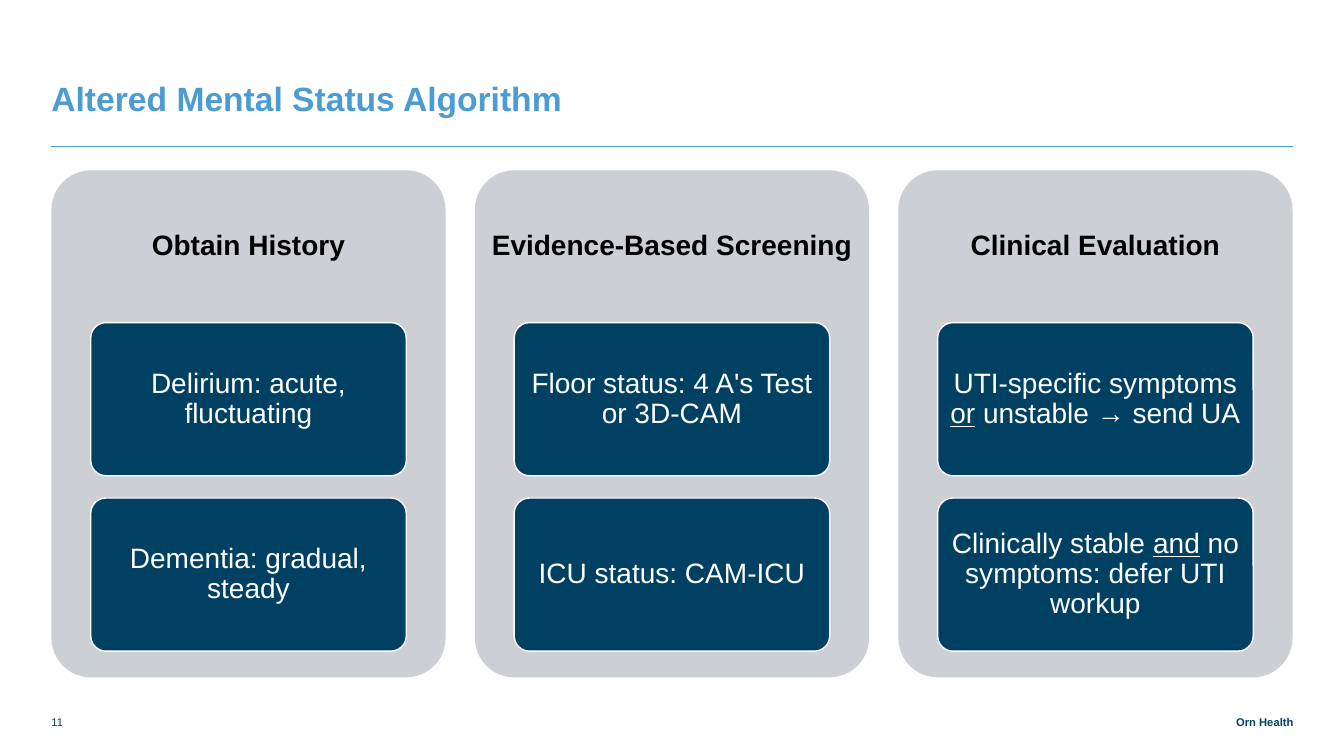
"""Build the Altered Mental Status Algorithm slide: three panels of two cards each."""
from lxml import etree
from pptx import Presentation
from pptx.dml.color import RGBColor
from pptx.enum.shapes import MSO_CONNECTOR, MSO_SHAPE
from pptx.enum.text import MSO_ANCHOR, PP_ALIGN
from pptx.oxml.ns import qn
from pptx.util import Inches, Pt

ROUNDED = MSO_SHAPE.ROUNDED_RECTANGLE
STRAIGHT = MSO_CONNECTOR.STRAIGHT
MIDDLE, BOTTOM = MSO_ANCHOR.MIDDLE, MSO_ANCHOR.BOTTOM
LEFT, CENTER, RIGHT = PP_ALIGN.LEFT, PP_ALIGN.CENTER, PP_ALIGN.RIGHT

NAVY, SKY, GRAY, WHITE, BLACK = "004163", "4B9CD3", "CCCFD3", "FFFFFF", "000000"
MARGIN, PANEL_TOP, PANEL_WIDTH, PANEL_HEIGHT, PANEL_PITCH = 0.51, 1.69, 3.91, 5.03, 4.2
CARD_INDENT, CARD_TOP, CARD_WIDTH, CARD_HEIGHT, CARD_PITCH = 0.39, 3.2, 3.13, 1.52, 1.74

# Underscores enclose underlined words.
PANELS = [
    ("Obtain History",
     ["Delirium: acute, fluctuating", "Dementia: gradual, steady"]),
    ("Evidence-Based Screening",
     ["Floor status: 4 A's Test or 3D-CAM", "ICU status: CAM-ICU"]),
    ("Clinical Evaluation",
     ["UTI-specific symptoms _or_ unstable → send UA",
      "Clinically stable _and_ no symptoms: defer UTI workup"]),
]


def write(shape, text, size, color, bold, align, anchor, insets, spacing=None):
    frame = shape.text_frame
    frame.word_wrap = True
    frame.vertical_anchor = anchor
    (frame.margin_left, frame.margin_top,
     frame.margin_right, frame.margin_bottom) = [Inches(inset) for inset in insets]
    paragraph = frame.paragraphs[0]
    paragraph.alignment = align
    paragraph.line_spacing = spacing
    font = paragraph.font
    font.name, font.size, font.bold = "Arial", Pt(size), bold
    font.color.rgb = RGBColor.from_string(color)
    for index, part in enumerate(text.split("_")):
        run = paragraph.add_run()
        run.text = part
        if index % 2:
            run.font.underline = True


def add_rounded(left, top, width, height, fill):
    shape = slide.shapes.add_shape(
        ROUNDED, Inches(left), Inches(top), Inches(width), Inches(height))
    shape.adjustments[0] = 0.1
    shape.shadow.inherit = False
    shape.fill.solid()
    shape.fill.fore_color.rgb = RGBColor.from_string(fill)
    return shape


presentation = Presentation()
presentation.slide_width, presentation.slide_height = Inches(13.33), Inches(7.5)
slide = presentation.slides.add_slide(presentation.slide_layouts[5])

title = slide.shapes.title
title.left, title.top = Inches(MARGIN), Inches(0.38)
title.width, title.height = Inches(12.31), Inches(0.79)
write(title, "Altered Mental Status Algorithm", 24, SKY, True, LEFT, BOTTOM,
      (0, 0, 0.95, 0), Pt(28))

rule = slide.shapes.add_connector(
    STRAIGHT, Inches(MARGIN), Inches(1.45), Inches(12.82), Inches(1.45))
rule.line.color.rgb = RGBColor.from_string(SKY)
rule.line.width = Pt(0.5)
etree.SubElement(rule.line._get_or_add_ln().getparent(), qn("a:effectLst"))

for column, (heading, cards) in enumerate(PANELS):
    panel_left = MARGIN + column * PANEL_PITCH
    panel = add_rounded(panel_left, PANEL_TOP, PANEL_WIDTH, PANEL_HEIGHT, GRAY)
    panel.line.fill.background()
    write(panel, heading, 20, BLACK, True, CENTER, MIDDLE, (0, 0, 0, 3.52), 0.9)
    for row, text in enumerate(cards):
        card = add_rounded(panel_left + CARD_INDENT, CARD_TOP + row * CARD_PITCH,
                           CARD_WIDTH, CARD_HEIGHT, NAVY)
        card.line.color.rgb = RGBColor.from_string(WHITE)
        card.line.width = Pt(1)
        write(card, text, 20, WHITE, False, CENTER, MIDDLE,
              (0.06, 0.04, 0.06, 0.04), 0.9)

for left, width, text, bold, align in [(MARGIN, 0.46, "11", False, LEFT),
                                       (11.19, 1.64, "Orn Health", True, RIGHT)]:
    footer = slide.shapes.add_textbox(Inches(left), Inches(7), Inches(width), Inches(0.23))
    write(footer, text, 8, NAVY, bold, align, BOTTOM, (0, 0, 0, 0))

presentation.save("out.pptx")
